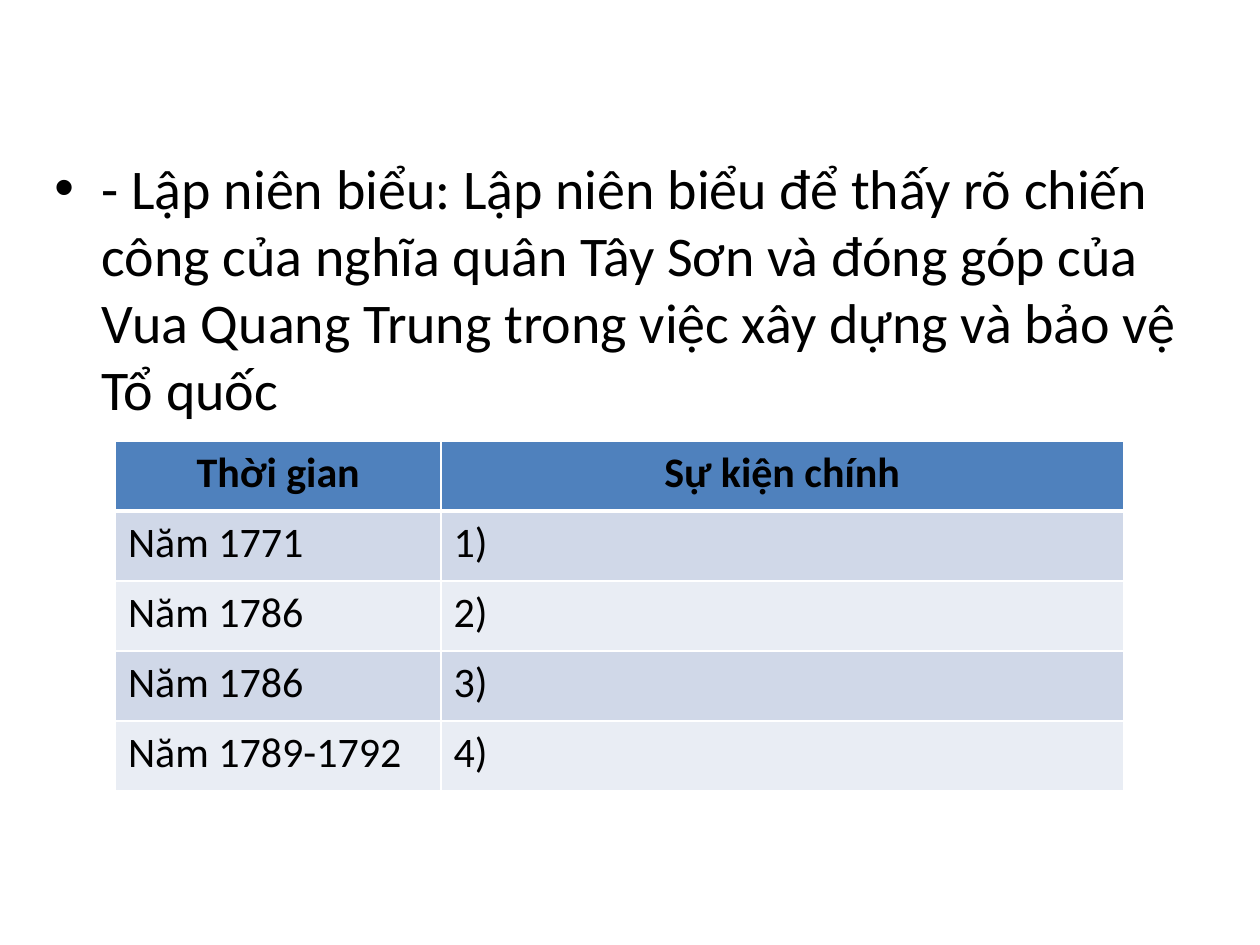
from dataclasses import dataclass

from lxml import etree
from pptx import Presentation
from pptx import util as u
from pptx.dml.color import RGBColor
from pptx.enum import text
from pptx.oxml import ns

COLOURS = {"ink": "000000", "header": "4F81BD", "odd": "D0D8E8",
           "even": "E9EDF4", "border": "FFFFFF"}
FONT = "Calibri"
TASK = ("- Lập niên biểu: Lập niên biểu để thấy rõ chiến công của nghĩa quân Tây Sơn "
        "và đóng góp của Vua Quang Trung trong việc xây dựng và bảo vệ Tổ quốc")
COLUMN_WIDTHS = (186, 390)
ROW_HEIGHT = 40


@dataclass(frozen=True)
class TimelineRow:
    time: str
    event: str
    fill: str
    header: bool = False
    top_border: float = 1
    bottom_border: float = 1


TIMELINE = [
    TimelineRow("Thời gian", "Sự kiện chính", "header", header=True, bottom_border=3),
    TimelineRow("Năm 1771", "1)", "odd", top_border=3),
    TimelineRow("Năm 1786", "2)", "even"),
    TimelineRow("Năm 1786", "3)", "odd"),
    TimelineRow("Năm 1789-1792", "4)", "even"),
]


def add_span(para, words: str, size: float, bold: bool = False) -> None:
    """Add one styled run to a paragraph."""
    span = para.add_run()
    span.text = words
    span.font.name = FONT
    span.font.size = u.Pt(size)
    span.font.bold = bold
    span.font.color.rgb = RGBColor.from_string(COLOURS["ink"])


def add_bullet(para, indent: float) -> None:
    """Give a paragraph a round bullet with a hanging indent."""
    properties = para._p.get_or_add_pPr()
    properties.set("marL", str(u.Pt(indent)))
    properties.set("indent", str(-u.Pt(indent)))
    etree.SubElement(properties, ns.qn("a:buFont"), typeface="Arial")
    etree.SubElement(properties, ns.qn("a:buChar"), char="•")


def add_task(page) -> None:
    """Add the bulleted task description."""
    box = page.shapes.add_textbox(u.Pt(24), u.Pt(84), u.Pt(684), u.Pt(394.5))
    box.text_frame.word_wrap = True
    para = box.text_frame.paragraphs[0]
    para.space_before = u.Pt(6.4)
    add_bullet(para, 27)
    add_span(para, TASK, 32)


def add_border(cell, side: str, width: float) -> None:
    """Add a solid border to one side of a cell."""
    line = etree.SubElement(cell._tc.get_or_add_tcPr(), ns.qn(f"a:ln{side}"),
                            w=str(u.Pt(width)))
    fill = etree.SubElement(line, ns.qn("a:solidFill"))
    etree.SubElement(fill, ns.qn("a:srgbClr"), val=COLOURS["border"])


def fill_cell(cell, words: str, row: TimelineRow) -> None:
    """Write and style one cell of the timeline."""
    borders = {"L": 1, "R": 1, "T": row.top_border, "B": row.bottom_border}
    for side, width in borders.items():
        add_border(cell, side, width)
    cell.fill.solid()
    cell.fill.fore_color.rgb = RGBColor.from_string(COLOURS[row.fill])
    para = cell.text_frame.paragraphs[0]
    para.alignment = text.PP_ALIGN.CENTER if row.header else text.PP_ALIGN.LEFT
    add_span(para, words, 24, row.header)


def add_timeline(page) -> None:
    """Add the table of years and events."""
    table = page.shapes.add_table(
        len(TIMELINE), len(COLUMN_WIDTHS), u.Pt(66), u.Pt(252),
        u.Pt(sum(COLUMN_WIDTHS)), u.Pt(ROW_HEIGHT * len(TIMELINE))).table
    for column, width in zip(table.columns, COLUMN_WIDTHS):
        column.width = u.Pt(width)
    for index, row in enumerate(TIMELINE):
        table.rows[index].height = u.Pt(ROW_HEIGHT)
        for column, words in enumerate((row.time, row.event)):
            fill_cell(table.cell(index, column), words, row)


def main() -> None:
    """Build the timeline slide."""
    deck = Presentation()
    deck.slide_width, deck.slide_height = u.Pt(720), u.Pt(540)
    page = deck.slides.add_slide(deck.slide_layouts[6])
    add_task(page)
    add_timeline(page)
    deck.save("out.pptx")


if __name__ == "__main__":
    main()
